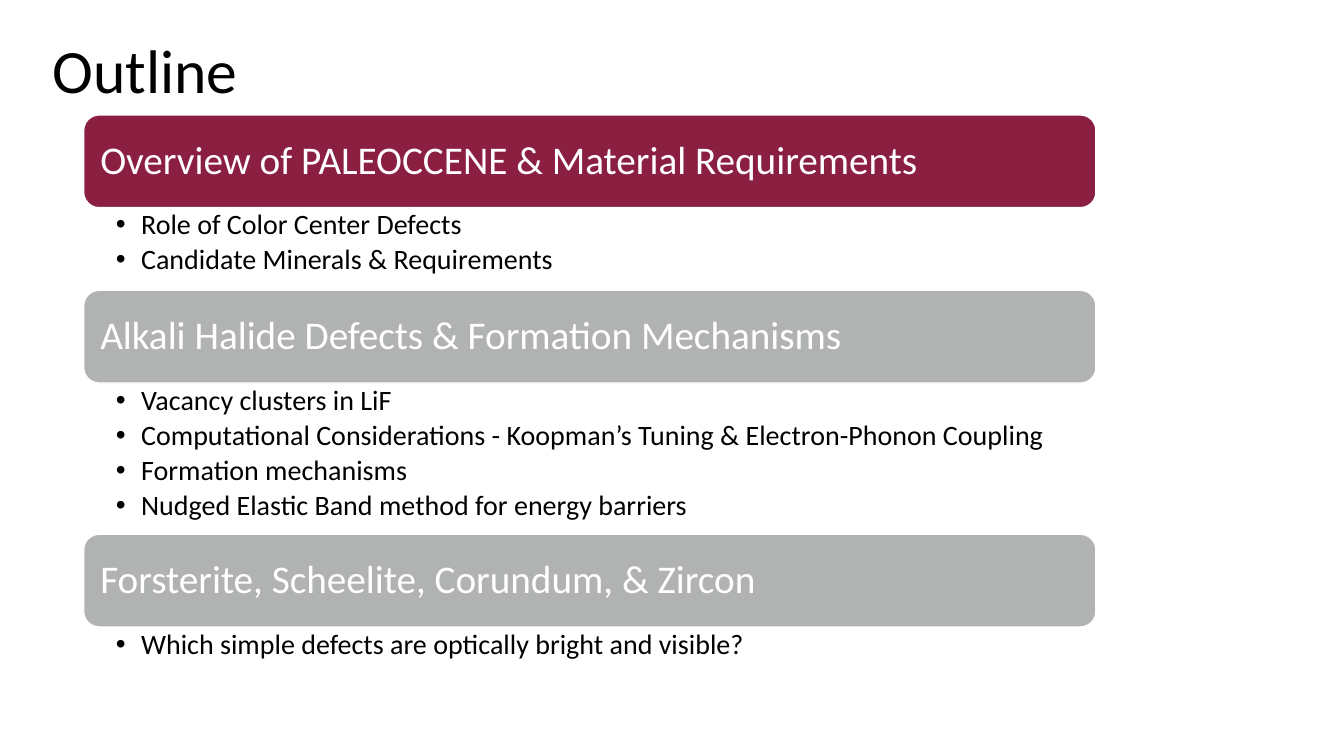
from lxml import etree
from pptx import Presentation
from pptx.dml.color import RGBColor
from pptx.enum.shapes import MSO_SHAPE
from pptx.enum.text import MSO_ANCHOR, PP_ALIGN
from pptx.oxml.ns import qn
from pptx.util import Inches, Pt

ROUNDED = MSO_SHAPE.ROUNDED_RECTANGLE
MIDDLE, TOP = MSO_ANCHOR.MIDDLE, MSO_ANCHOR.TOP
LEFT = PP_ALIGN.LEFT

MAROON = RGBColor(0x8B, 0x1F, 0x41)
GRAY = RGBColor(0xB1, 0xB3, 0xB3)
WHITE = RGBColor(0xFF, 0xFF, 0xFF)
BLACK = RGBColor(0x00, 0x00, 0x00)
FONT = "Calibri"

TITLE = "Outline"
# Heading, bar colour, height of the bullet area in inches, bullets
SECTIONS = [
    ("Overview of PALEOCCENE & Material Requirements", MAROON, 0.82, [
        "Role of Color Center Defects",
        "Candidate Minerals & Requirements",
    ]),
    ("Alkali Halide Defects & Formation Mechanisms", GRAY, 1.5, [
        "Vacancy clusters in LiF",
        "Computational Considerations - Koopman’s Tuning & Electron-Phonon Coupling",
        "Formation mechanisms",
        "Nudged Elastic Band method for energy barriers",
    ]),
    ("Forsterite, Scheelite, Corundum, & Zircon", GRAY, 0.82, [
        "Which simple defects are optically bright and visible?",
    ]),
]

SECTION_LEFT, SECTION_WIDTH = 0.83, 10.04
FIRST_TOP, BAR_HEIGHT = 1.14, 0.92


def place(shape, left, top, width, height):
    shape.left, shape.top = Inches(left), Inches(top)
    shape.width, shape.height = Inches(width), Inches(height)


def set_frame(text_frame, anchor, left, top, right, bottom):
    text_frame.word_wrap = True
    text_frame.vertical_anchor = anchor
    text_frame.margin_left, text_frame.margin_right = Inches(left), Inches(right)
    text_frame.margin_top, text_frame.margin_bottom = Inches(top), Inches(bottom)


def write(paragraph, text, size, color):
    paragraph.alignment = LEFT
    paragraph.line_spacing = 0.9
    run = paragraph.add_run()
    run.text = text
    run.font.name = FONT
    run.font.size = Pt(size)
    run.font.color.rgb = color


def add_bullet(paragraph):
    properties = paragraph._p.get_or_add_pPr()
    properties.set("marL", str(Inches(0.25)))
    properties.set("indent", str(-Inches(0.25)))
    etree.SubElement(properties, qn("a:buFont")).set("typeface", "Arial")
    etree.SubElement(properties, qn("a:buChar")).set("char", "•")


def add_bar(slide, top, heading, color):
    bar = slide.shapes.add_shape(ROUNDED, Inches(SECTION_LEFT), Inches(top),
                                 Inches(SECTION_WIDTH), Inches(BAR_HEIGHT))
    bar.shadow.inherit = False
    bar.fill.solid()
    bar.fill.fore_color.rgb = color
    bar.line.color.rgb = WHITE
    bar.line.width = Pt(1)
    # The rounded corners add a little to the inset of the text
    set_frame(bar.text_frame, MIDDLE, 0.12, 0.12, 0.12, 0.12)
    write(bar.text_frame.paragraphs[0], heading, 28, WHITE)


def add_bullets(slide, top, height, bullets):
    box = slide.shapes.add_textbox(Inches(SECTION_LEFT), Inches(top),
                                   Inches(SECTION_WIDTH), Inches(height))
    frame = box.text_frame
    set_frame(frame, TOP, 0.32, 0.03, 0.16, 0.03)
    for index, text in enumerate(bullets):
        paragraph = frame.add_paragraph() if index else frame.paragraphs[0]
        add_bullet(paragraph)
        paragraph.space_after = Pt(3.5)
        write(paragraph, text, 20, BLACK)


def main():
    presentation = Presentation()
    presentation.slide_width, presentation.slide_height = Inches(13.33), Inches(7.5)
    slide = presentation.slides.add_slide(presentation.slide_layouts[5])

    title = slide.shapes.title
    place(title, 0.42, 0, 11.5, 1.45)
    set_frame(title.text_frame, MIDDLE, 0.1, 0.05, 0.1, 0.05)
    write(title.text_frame.paragraphs[0], TITLE, 44, BLACK)

    top = FIRST_TOP
    for heading, color, bullets_height, bullets in SECTIONS:
        add_bar(slide, top, heading, color)
        add_bullets(slide, top + BAR_HEIGHT, bullets_height, bullets)
        top += BAR_HEIGHT + bullets_height

    presentation.save("out.pptx")


if __name__ == "__main__":
    main()
